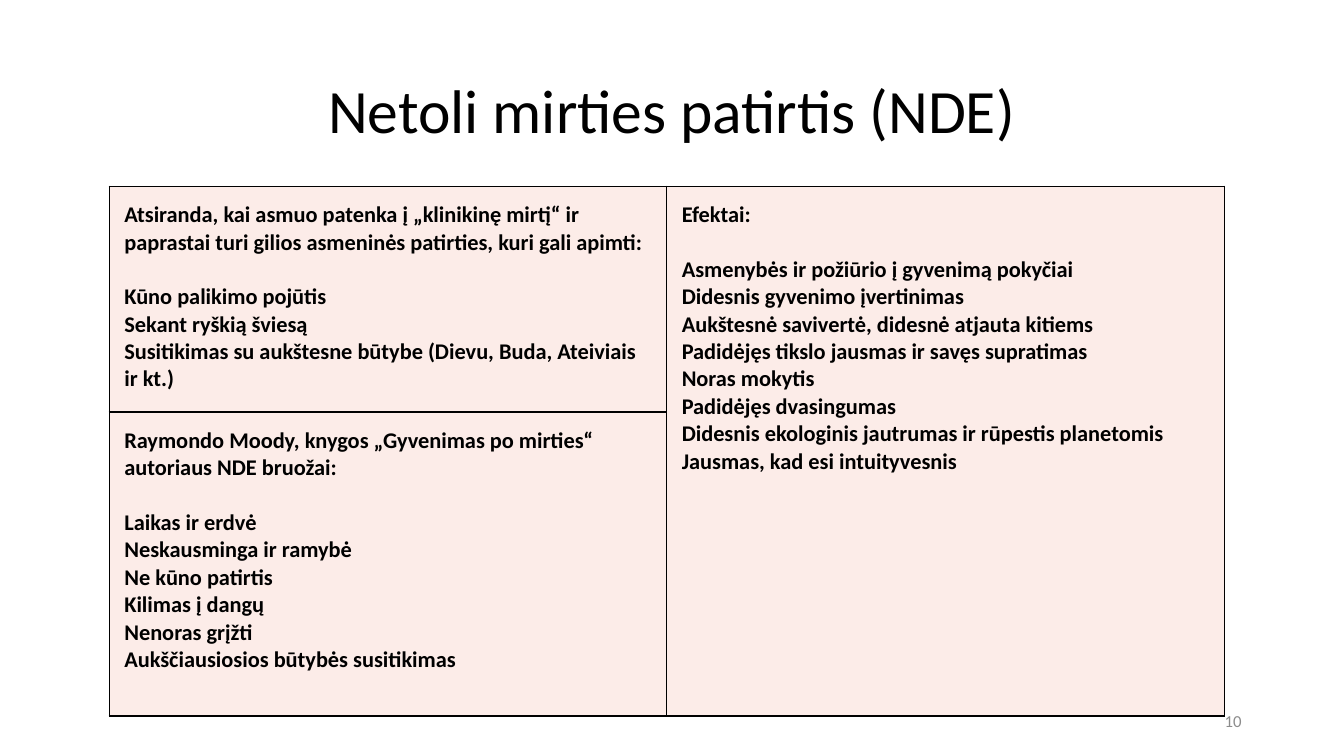
from dataclasses import dataclass

from lxml.etree import SubElement
from pptx import Presentation
from pptx.dml.color import RGBColor
from pptx.enum.text import MSO_ANCHOR, PP_ALIGN
from pptx.oxml.ns import qn
from pptx.util import Pt


@dataclass(frozen=True)
class Theme:
    font: str = "Calibri"
    ink: str = "000000"
    muted: str = "8C8C8C"
    cell_fill: str = "FCECE8"
    title_size: float = 44
    body_size: float = 16
    number_size: float = 12
    cell_margin: float = 10.8
    border_width: float = 1


NDE_EXPERIENCE = [
    "Atsiranda, kai asmuo patenka į „klinikinę mirtį“ ir paprastai turi gilios "
    "asmeninės patirties, kuri gali apimti:",
    "Kūno palikimo pojūtis",
    "Sekant ryškią šviesą",
    "Susitikimas su aukštesne būtybe (Dievu, Buda, Ateiviais ir kt.)",
]
MOODY_FEATURES = [
    "Raymondo Moody, knygos „Gyvenimas po mirties“ autoriaus NDE bruožai:",
    "Laikas ir erdvė",
    "Neskausminga ir ramybė",
    "Ne kūno patirtis",
    "Kilimas į dangų",
    "Nenoras grįžti",
    "Aukščiausiosios būtybės susitikimas",
]
EFFECTS = [
    "Efektai:",
    "Asmenybės ir požiūrio į gyvenimą pokyčiai",
    "Didesnis gyvenimo įvertinimas",
    "Aukštesnė savivertė, didesnė atjauta kitiems",
    "Padidėjęs tikslo jausmas ir savęs supratimas",
    "Noras mokytis",
    "Padidėjęs dvasingumas",
    "Didesnis ekologinis jautrumas ir rūpestis planetomis",
    "Jausmas, kad esi intuityvesnis",
]


def write_text(paragraph, text, *, font, size, color, bold=False,
               align=PP_ALIGN.LEFT, line_spacing=None, space_after=0):
    paragraph.alignment = align
    paragraph.line_spacing = line_spacing
    paragraph.space_after = Pt(space_after)
    run = paragraph.add_run()
    run.text = text
    run.font.name = font
    run.font.size = Pt(size)
    run.font.bold = bold
    run.font.color.rgb = RGBColor.from_string(color)


class SlideBuilder:
    def __init__(self, slide, theme):
        self.slide = slide
        self.theme = theme

    def text_box(self, text, left, top, width, height, **text_format):
        shape = self.slide.shapes.add_textbox(Pt(left), Pt(top), Pt(width), Pt(height))
        frame = shape.text_frame
        frame.word_wrap = True
        frame.vertical_anchor = MSO_ANCHOR.MIDDLE
        write_text(frame.paragraphs[0], text, font=self.theme.font, **text_format)

    def table(self, left, top, column_widths, row_heights):
        shape = self.slide.shapes.add_table(
            len(row_heights), len(column_widths), Pt(left), Pt(top),
            Pt(sum(column_widths)), Pt(sum(row_heights)))
        table = shape.table
        table.first_row = table.horz_banding = False
        for column, width in zip(table.columns, column_widths):
            column.width = Pt(width)
        for row, height in zip(table.rows, row_heights):
            row.height = Pt(height)
        for cell in table.iter_cells():
            self.style_cell(cell)
        return table

    def style_cell(self, cell):
        theme = self.theme
        margin = Pt(theme.cell_margin)
        cell.margin_left = cell.margin_right = margin
        cell.margin_top = cell.margin_bottom = margin
        cell.fill.solid()
        cell.fill.fore_color.rgb = RGBColor.from_string(theme.cell_fill)
        properties = cell._tc.get_or_add_tcPr()
        # The schema wants the four borders ahead of the fill.
        for index, side in enumerate(("a:lnL", "a:lnR", "a:lnT", "a:lnB")):
            line = SubElement(properties, qn(side), w=str(Pt(theme.border_width)))
            fill = SubElement(line, qn("a:solidFill"))
            SubElement(fill, qn("a:srgbClr"), val=theme.ink)
            properties.insert(index, line)

    def cell_list(self, cell, lines):
        """Write a heading, a gap one line high, and the items below it."""
        theme = self.theme
        frame = cell.text_frame
        for index, text in enumerate(lines):
            paragraph = frame.add_paragraph() if index else frame.paragraphs[0]
            write_text(paragraph, text, font=theme.font, size=theme.body_size,
                       color=theme.ink, bold=True,
                       space_after=0 if index else theme.body_size * 1.22)


def main():
    presentation = Presentation()
    presentation.slide_width = Pt(960)
    presentation.slide_height = Pt(540)
    theme = Theme()
    slide = presentation.slides.add_slide(presentation.slide_layouts[6])
    builder = SlideBuilder(slide, theme)

    builder.text_box("Netoli mirties patirtis (NDE)", 66, 28.75, 828, 104.4,
                     size=theme.title_size, color=theme.ink,
                     align=PP_ALIGN.CENTER, line_spacing=0.9)
    builder.text_box("10", 678, 500.5, 216, 28.75, size=theme.number_size,
                     color=theme.muted, align=PP_ALIGN.RIGHT)

    table = builder.table(78, 133, [398.2] * 2, [161.3, 217.2])
    table.cell(0, 1).merge(table.cell(1, 1))
    builder.cell_list(table.cell(0, 0), NDE_EXPERIENCE)
    builder.cell_list(table.cell(1, 0), MOODY_FEATURES)
    builder.cell_list(table.cell(0, 1), EFFECTS)

    presentation.save("out.pptx")


if __name__ == "__main__":
    main()
